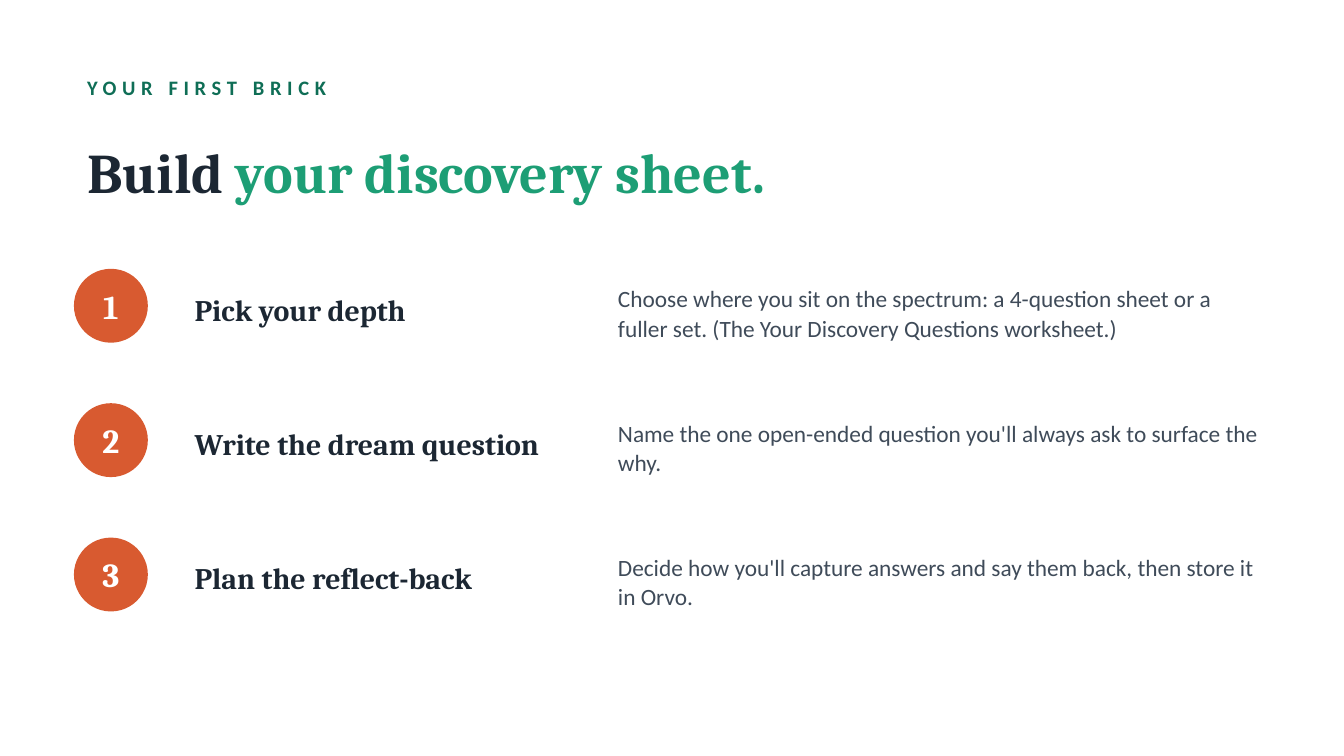
import pptx
import pptx.dml.color
import pptx.enum.shapes
import pptx.enum.text
import pptx.util

Inches = pptx.util.Inches
Pt = pptx.util.Pt
RGBColor = pptx.dml.color.RGBColor
ALIGN = pptx.enum.text.PP_ALIGN

INK = RGBColor(0x1C, 0x27, 0x33)
SLATE = RGBColor(0x3F, 0x4B, 0x59)
DARK_GREEN = RGBColor(0x0F, 0x6E, 0x56)
GREEN = RGBColor(0x1D, 0x9E, 0x75)
ORANGE = RGBColor(0xD8, 0x5A, 0x30)
WHITE = RGBColor(0xFF, 0xFF, 0xFF)

# Text styles
EYEBROW = {"name": "Calibri", "size": Pt(11), "bold": True}
HEADLINE = {"name": "Cambria", "size": Pt(30), "bold": True}
NUMBER = {"name": "Cambria", "size": Pt(18), "bold": True}
STEP_NAME = {"name": "Cambria", "size": Pt(16), "bold": True}
DETAIL = {"name": "Calibri", "size": Pt(12.5), "bold": False}

LEFT = 0.55
FIRST_STEP_TOP = 2
STEP_PITCH = 1
BADGE_SIZE = 0.55

STEPS = [
    ("Pick your depth",
     "Choose where you sit on the spectrum: a 4-question sheet or a fuller "
     "set. (The Your Discovery Questions worksheet.)"),
    ("Write the dream question",
     "Name the one open-ended question you'll always ask to surface the why."),
    ("Plan the reflect-back",
     "Decide how you'll capture answers and say them back, then store it in "
     "Orvo."),
]


def write(shape, parts, style, align=ALIGN.LEFT, line_spacing=None):
    """Fill a shape with one paragraph of (text, colour) parts."""
    frame = shape.text_frame
    frame.word_wrap = True
    frame.auto_size = pptx.enum.text.MSO_AUTO_SIZE.NONE
    frame.vertical_anchor = pptx.enum.text.MSO_ANCHOR.MIDDLE
    paragraph = frame.paragraphs[0]
    paragraph.alignment = align
    if line_spacing:
        paragraph.line_spacing = line_spacing
    for text, color in parts:
        run = paragraph.add_run()
        run.text = text
        for attribute, value in style.items():
            setattr(run.font, attribute, value)
        run.font.color.rgb = color
    return paragraph


def add_label(slide, box, text, color, style, line_spacing=None):
    label = slide.shapes.add_textbox(*map(Inches, box))
    return write(label, [(text, color)], style, line_spacing=line_spacing)


def add_eyebrow(slide, text):
    eyebrow = add_label(slide, (LEFT, 0.5, 8.9, 0.3), text, DARK_GREEN, EYEBROW)
    # Letter spacing, in hundredths of a point
    eyebrow.runs[0].font._element.set("spc", "300")


def add_headline(slide, parts):
    headline = slide.shapes.title
    place = {"left": LEFT, "top": 0.85, "width": 8.9, "height": 0.85}
    for attribute, value in place.items():
        setattr(headline, attribute, Inches(value))
    write(headline, parts, HEADLINE)


def add_badge(slide, top, number):
    badge = slide.shapes.add_shape(
        pptx.enum.shapes.MSO_SHAPE.OVAL,
        *map(Inches, (LEFT, top, BADGE_SIZE, BADGE_SIZE)))
    badge.shadow.inherit = False
    badge.fill.solid()
    badge.fill.fore_color.rgb = ORANGE
    badge.line.fill.background()
    for side in ("left", "top", "right", "bottom"):
        setattr(badge.text_frame, f"margin_{side}", 0)
    write(badge, [(str(number), WHITE)], NUMBER, ALIGN.CENTER)


def add_step(slide, number, name, detail):
    top = FIRST_STEP_TOP + (number - 1) * STEP_PITCH
    add_badge(slide, top, number)
    add_label(slide, (1.35, top - 0.05, 3, 0.7), name, INK, STEP_NAME)
    add_label(slide, (4.5, top - 0.05, 5, 0.75), detail, SLATE, DETAIL, 1.05)


def main():
    deck = pptx.Presentation()
    # Widescreen, 16:9
    deck.slide_width = Inches(10)
    deck.slide_height = deck.slide_width * 9 // 16
    slide = deck.slides.add_slide(deck.slide_layouts[5])
    slide.background.fill.solid()
    slide.background.fill.fore_color.rgb = WHITE

    # Heading
    add_eyebrow(slide, "YOUR FIRST BRICK")
    add_headline(slide, [("Build ", INK), ("your discovery sheet.", GREEN)])

    # Numbered steps
    for number, (name, detail) in enumerate(STEPS, start=1):
        add_step(slide, number, name, detail)

    deck.save("out.pptx")


if __name__ == "__main__":
    main()
